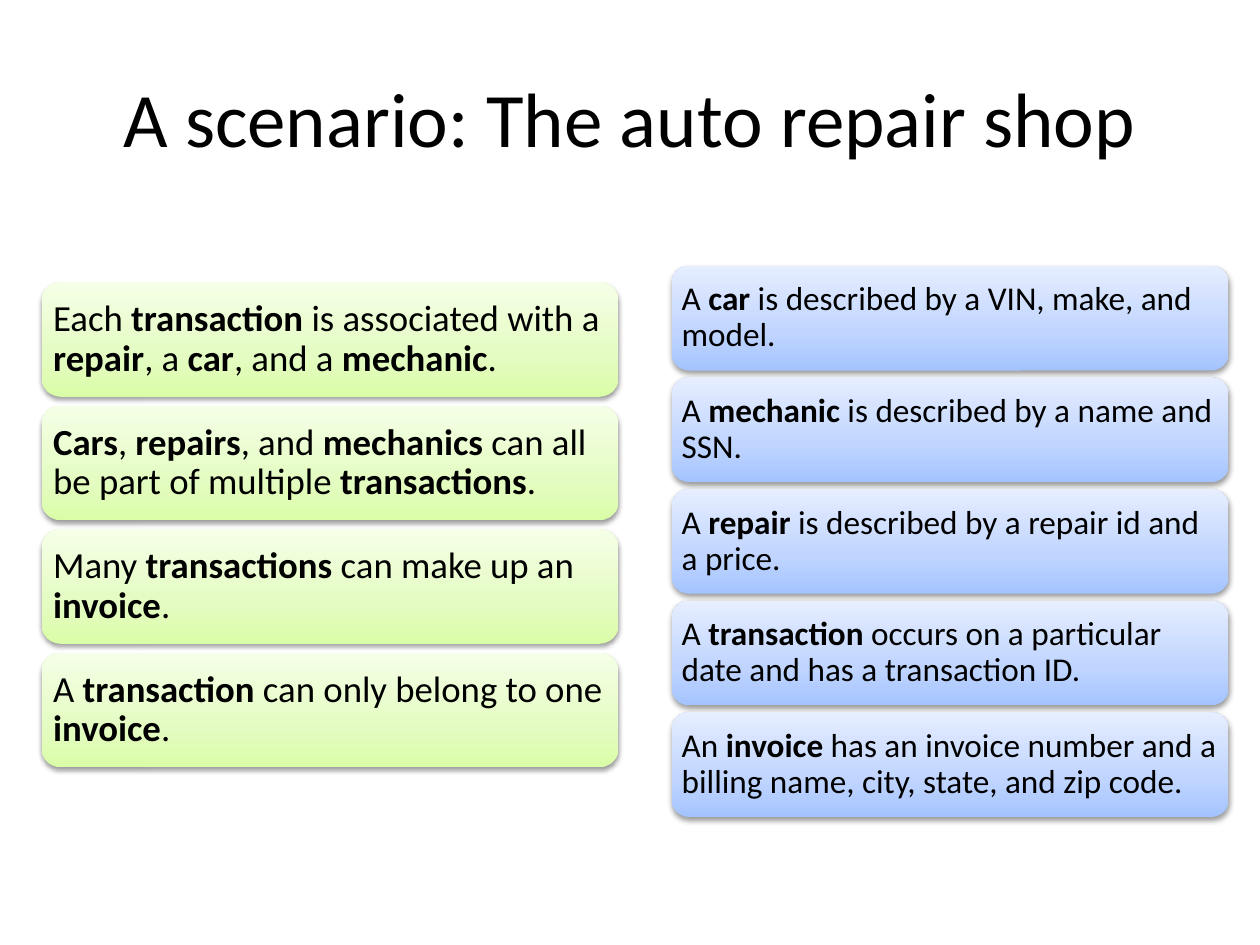
from lxml import etree
from pptx import Presentation
from pptx.dml.color import RGBColor
from pptx.enum.shapes import MSO_SHAPE as Shape
from pptx.enum.text import MSO_ANCHOR as Anchor, PP_ALIGN as Align
from pptx.oxml import parse_xml
from pptx.oxml.ns import nsdecls, qn
from pptx.util import Cm, Pt

FONT = "Calibri"
GREEN = {0: "DAFDA7", 35: "E4FCC2", 100: "F5FFE7"}
BLUE = {0: "A4C4FF", 35: "BFD4FF", 100: "E6EEFF"}

# Asterisks enclose bold words.
TRANSACTION_RULES = [
    "Each *transaction* is associated with a *repair*, a *car*, and a *mechanic*.",
    "*Cars*, *repairs*, and *mechanics* can all be part of multiple *transactions*.",
    "Many *transactions* can make up an *invoice*.",
    "A *transaction* can only belong to one *invoice*.",
]
DESCRIPTIONS = [
    "A *car* is described by a VIN, make, and model.",
    "A *mechanic* is described by a name and SSN.",
    "A *repair* is described by a repair id and a price.",
    "A *transaction* occurs on a particular date and has a transaction ID.",
    "An *invoice* has an invoice number and a billing name, city, state, and zip code.",
]


def color(hex_string):
    return RGBColor.from_string(hex_string)


def write_text(shape, text, *, size, align=Align.LEFT, spacing=1.0, inset=None):
    """Fill the shape with one paragraph, bold between asterisks."""
    frame = shape.text_frame
    frame.word_wrap = True
    frame.vertical_anchor = Anchor.MIDDLE
    if inset is not None:
        frame.margin_left = frame.margin_right = inset
        frame.margin_top = frame.margin_bottom = inset
    paragraph = frame.paragraphs[0]
    paragraph.alignment = align
    paragraph.line_spacing = spacing
    for index, part in enumerate(text.split("*")):
        if part:
            run = paragraph.add_run()
            run.text = part
            run.font.name = FONT
            run.font.size = Pt(size)
            run.font.bold = index % 2 == 1
            run.font.color.rgb = color("000000")


def add_gradient(shape, stops):
    """Apply a gradient that runs from the bottom edge to the top."""
    gradient = parse_xml(f'<a:gradFill {nsdecls("a")} rotWithShape="1"><a:gsLst/>'
                         '<a:lin ang="16200000" scaled="0"/></a:gradFill>')
    stop_list = gradient.find(qn("a:gsLst"))
    for percent, hex_string in stops.items():
        stop = etree.SubElement(stop_list, qn("a:gs"), pos=str(percent * 1000))
        etree.SubElement(stop, qn("a:srgbClr"), val=hex_string)
    shape.element.spPr.find(qn("a:prstGeom")).addnext(gradient)


def add_shadow(shape):
    shape.shadow.inherit = False
    effects = shape.element.spPr.find(qn("a:effectLst"))
    effects.append(parse_xml(
        f'<a:outerShdw {nsdecls("a")} blurRad="{Pt(3.1)}" dist="{Pt(1.6)}" '
        'dir="5400000" rotWithShape="0"><a:srgbClr val="000000">'
        '<a:alpha val="38000"/></a:srgbClr></a:outerShdw>'))


def add_card(slide, text, left, top, width, height, *, stops, size, inset):
    card = slide.shapes.add_shape(Shape.ROUNDED_RECTANGLE, left, top, width, height)
    card.line.fill.background()
    add_gradient(card, stops)
    add_shadow(card)
    write_text(card, text, size=size, spacing=0.9, inset=inset)


def add_card_column(slide, texts, left, top, width, height, pitch, **style):
    for row, text in enumerate(texts):
        add_card(slide, text, Cm(left), Cm(top + row * pitch),
                 Cm(width), Cm(height), **style)


def add_title(slide, text):
    title = slide.shapes.add_textbox(Cm(1.27), Cm(0.76), Cm(22.86), Cm(3.18))
    write_text(title, text, size=44, align=Align.CENTER)


def main():
    presentation = Presentation()
    presentation.slide_width, presentation.slide_height = Cm(25.4), Cm(19.05)
    slide = presentation.slides.add_slide(presentation.slide_layouts[6])
    add_title(slide, "A scenario: The auto repair shop")
    add_card_column(slide, TRANSACTION_RULES, 0.84, 5.69, 11.63, 2.31, 2.49,
                    stops=GREEN, size=21, inset=Cm(0.12))
    add_card_column(slide, DESCRIPTIONS, 13.54, 5.36, 11.23, 2.11, 2.25,
                    stops=BLUE, size=19, inset=Cm(0.1))
    presentation.save("out.pptx")


if __name__ == "__main__":
    main()
